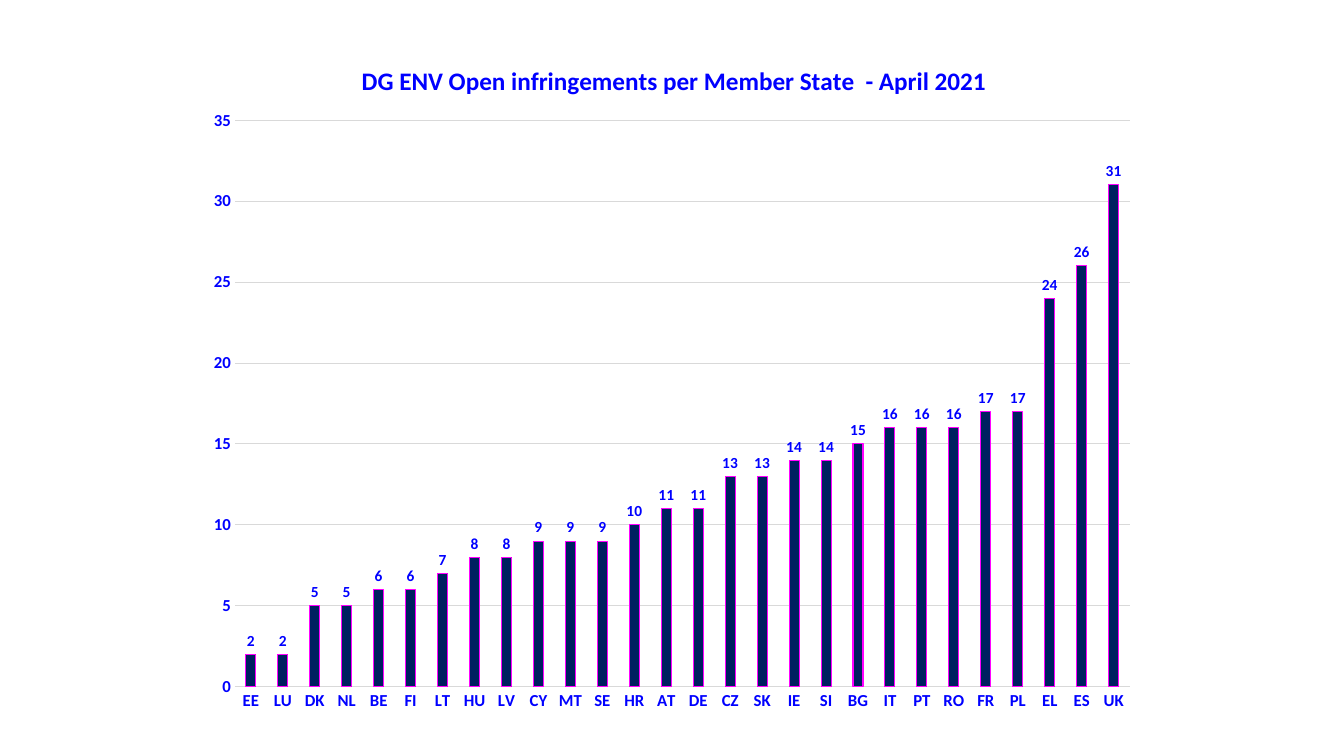
from lxml import etree
from pptx import Presentation
from pptx.chart.data import CategoryChartData
from pptx.dml.color import RGBColor
from pptx.enum.chart import XL_CHART_TYPE, XL_LABEL_POSITION, XL_TICK_MARK
from pptx.oxml.ns import qn
from pptx.util import Cm, Pt

COLUMNS = XL_CHART_TYPE.COLUMN_CLUSTERED
OUTSIDE_END = XL_LABEL_POSITION.OUTSIDE_END
NO_TICK = XL_TICK_MARK.NONE

BLACK = RGBColor(0x00, 0x00, 0x00)
BLUE = RGBColor(0x00, 0x00, 0xFF)
NAVY = RGBColor(0x00, 0x20, 0x60)
MAGENTA = RGBColor(0xFF, 0x00, 0xFF)
GREY = RGBColor(0xD9, 0xD9, 0xD9)
FONT = "Calibri"

CHART_WIDTH, CHART_HEIGHT = Cm(24.05), Cm(17.48)
TITLE = "DG ENV Open infringements per Member State  - April 2021"
STATES = ("EE LU DK NL BE FI LT HU LV CY MT SE HR AT DE "
          "CZ SK IE SI BG IT PT RO FR PL EL ES UK").split()
INFRINGEMENTS = [2, 2, 5, 5, 6, 6, 7, 8, 8, 9, 9, 9, 10, 11, 11,
                 13, 13, 14, 14, 15, 16, 16, 16, 17, 17, 24, 26, 31]


def format_font(font, size, color=BLUE, bold=True):
    font.name = FONT
    font.size = Pt(size)
    font.bold = bold
    font.color.rgb = color


def add_text(tf, text, **font_format):
    r = tf.paragraphs[0].add_run()
    r.text = text
    format_font(r.font, **font_format)


def format_line(line, color):
    line.color.rgb = color
    line.width = Pt(0.75)


def set_layout(part, index, modes, **lengths):
    """Place a chart part by lengths within the chart; index is the layout's place in the XML."""
    for old in part.findall(qn("c:layout")):
        part.remove(old)
    layout = etree.Element(qn("c:layout"))
    part.insert(index, layout)
    manual = etree.SubElement(layout, qn("c:manualLayout"))
    for name, mode in modes.items():
        etree.SubElement(manual, qn(f"c:{name}")).set("val", mode)
    for name, length in lengths.items():
        whole = CHART_WIDTH if name in "xw" else CHART_HEIGHT
        etree.SubElement(manual, qn(f"c:{name}")).set("val", str(length / whole))


def add_title(chart, text):
    title = chart.chart_title
    add_text(title.text_frame, text, size=18)
    set_layout(title._element, 1, {"xMode": "edge", "yMode": "edge"},
               x=Cm(4.1), y=Cm(0.7))


def format_axes(chart):
    for axis in (chart.category_axis, chart.value_axis):
        axis.major_tick_mark = axis.minor_tick_mark = NO_TICK
        format_font(axis.tick_labels.font, size=12)
    format_line(chart.category_axis.format.line, GREY)
    values = chart.value_axis
    values.minimum_scale, values.maximum_scale, values.major_unit = 0, 35, 5
    values.format.line.fill.background()
    format_line(values.major_gridlines.format.line, GREY)


def format_columns(plot):
    plot.gap_width = 219
    plot.overlap = -27
    plot.vary_by_categories = False
    series = plot.series[0]
    series.format.fill.solid()
    series.format.fill.fore_color.rgb = NAVY
    format_line(series.format.line, MAGENTA)
    labels = series.data_labels
    labels.show_value = True
    labels.position = OUTSIDE_END
    format_font(labels.font, size=11)


def add_column_chart(slide, left, top):
    data = CategoryChartData()
    data.categories = STATES
    data.add_series("Series 1", INFRINGEMENTS)
    chart = slide.shapes.add_chart(
        COLUMNS, left, top, CHART_WIDTH, CHART_HEIGHT, data).chart
    format_font(chart.font, size=10, color=BLACK, bold=False)
    chart.has_legend = False
    add_title(chart, TITLE)
    format_axes(chart)
    format_columns(chart.plots[0])
    plot_area = chart._chartSpace.find(f".//{qn('c:plotArea')}")
    set_layout(plot_area, 0,
               {"layoutTarget": "inner", "xMode": "edge", "yMode": "edge"},
               x=Cm(1.02), y=Cm(2.24), w=Cm(22.55), h=Cm(14.28))


def main():
    prs = Presentation()
    prs.slide_width, prs.slide_height = Cm(33.87), Cm(19.05)
    slide = prs.slides.add_slide(prs.slide_layouts[6])
    add_column_chart(slide, Cm(4.9), Cm(0.79))
    prs.save("out.pptx")


if __name__ == "__main__":
    main()
